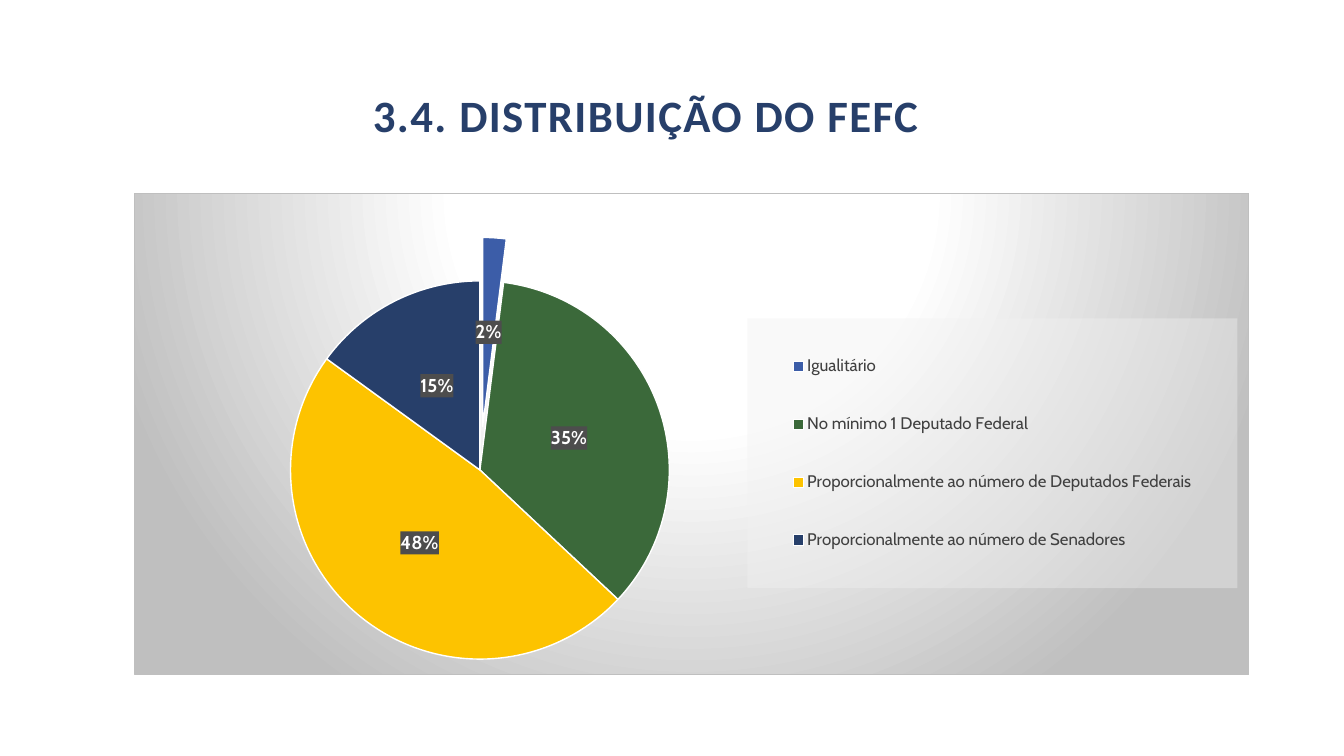
from dataclasses import dataclass

from lxml import etree
from pptx import Presentation
from pptx.chart.data import CategoryChartData
from pptx.dml.color import RGBColor
from pptx.enum.chart import XL_CHART_TYPE as ChartType
from pptx.enum.chart import XL_LABEL_POSITION as LabelPos
from pptx.enum.chart import XL_LEGEND_POSITION as LegendPos
from pptx.enum.text import MSO_ANCHOR as Anchor
from pptx.oxml import parse_xml
from pptx.oxml.ns import nsdecls, qn
from pptx.util import Inches, Pt

NAVY = "273F6A"
WHITE = "FFFFFF"
SILVER = "BFBFBF"


@dataclass(frozen=True)
class Slice:
    name: str
    share: int
    color: str
    explosion: int = 0


SLICES = [
    Slice("Igualitário", 2, "3C5DA8", 23),
    Slice("No mínimo 1 Deputado Federal", 35, "3B693A"),
    Slice("Proporcionalmente ao número de Deputados Federais", 48, "FDC300"),
    Slice("Proporcionalmente ao número de Senadores", 15, NAVY),
]


def rgb(color: str) -> RGBColor:
    return RGBColor.from_string(color)


def style_font(font, name: str, size: float, color: str, bold: bool = False) -> None:
    font.name, font.size, font.bold = name, Pt(size), bold
    font.color.rgb = rgb(color)


def shape_props(inner: str) -> etree.ElementBase:
    return parse_xml(f'<c:spPr {nsdecls("c", "a")}>{inner}</c:spPr>')


def solid_fill(color: str, alpha: int) -> str:
    return (f'<a:solidFill><a:srgbClr val="{color}"><a:alpha val="{alpha * 1000}"/>'
            '</a:srgbClr></a:solidFill>')


def manual_layout(x: float, y: float, w: float, h: float, inner: bool = False) -> etree.ElementBase:
    target = '<c:layoutTarget val="inner"/>' if inner else ""
    return parse_xml(
        f'<c:layout {nsdecls("c")}><c:manualLayout>{target}'
        '<c:xMode val="edge"/><c:yMode val="edge"/>'
        f'<c:x val="{x}"/><c:y val="{y}"/><c:w val="{w}"/><c:h val="{h}"/>'
        '</c:manualLayout></c:layout>')


def drop_layout(parent) -> None:
    for layout in parent.findall(qn("c:layout")):
        parent.remove(layout)


def add_title(slide, text: str) -> None:
    sp = slide.shapes.add_textbox(Inches(3.6), Inches(0.68), Inches(6.76), Inches(1.02))
    tf = sp.text_frame
    tf.word_wrap = True
    tf.vertical_anchor = Anchor.MIDDLE
    p = tf.paragraphs[0]
    p.line_spacing = 0.8
    r = p.add_run()
    r.text = text
    style_font(r.font, "Calibri", 32, NAVY, bold=True)
    r.font._element.set("spc", "100")


def add_pie(slide):
    data = CategoryChartData()
    data.categories = [s.name for s in SLICES]
    data.add_series("Series 1", [s.share for s in SLICES])
    chart = slide.shapes.add_chart(ChartType.PIE, Inches(1.33), Inches(1.91),
                                   Inches(11.06), Inches(4.79), data).chart
    chart.has_title = False
    style_font(chart.font, "Cabin", 10, "000000")
    plot = chart.plots[0]
    plot.vary_by_categories = True

    # Slices
    series = plot.series[0]
    for i, item in enumerate(SLICES):
        point = series.points[i]
        point.format.fill.solid()
        point.format.fill.fore_color.rgb = rgb(item.color)
        point.format.line.color.rgb = rgb(WHITE)
        point.format.line.width = Pt(1)
        if item.explosion:
            dpt = chart.element.findall(".//" + qn("c:dPt"))[i]
            dpt.find(qn("c:spPr")).addprevious(
                parse_xml(f'<c:explosion {nsdecls("c")} val="{item.explosion}"/>'))

    # Percentage labels on dark plates
    labels = series.data_labels
    labels.show_percentage = True
    labels.show_value = False
    labels.number_format, labels.number_format_is_linked = "0%", False
    labels.position = LabelPos.CENTER
    style_font(labels.font, "Cabin", 13.3, WHITE, bold=True)
    label_xml = chart.element.find(".//" + qn("c:dLbls"))
    label_xml.find(qn("c:txPr")).addprevious(shape_props(solid_fill("4D4D4D", 100)))

    plot_area = chart.element.find(".//" + qn("c:plotArea"))
    drop_layout(plot_area)
    plot_area.insert(0, manual_layout(0.14, 0.18, 0.34, 0.79, inner=True))
    return chart


def style_legend(chart) -> None:
    chart.has_legend = True
    legend = chart.legend
    legend.position = LegendPos.RIGHT
    legend.include_in_layout = False
    style_font(legend.font, "Cabin", 12, "404040")
    legend_xml = chart.element.find(".//" + qn("c:legend"))
    drop_layout(legend_xml)
    legend_xml.find(qn("c:legendPos")).addnext(manual_layout(0.55, 0.26, 0.44, 0.56))
    legend_xml.find(qn("c:txPr")).addprevious(shape_props(solid_fill("F2F2F2", 39)))


def style_background(chart) -> None:
    stops = "".join(f'<a:gs pos="{pos * 1000}"><a:srgbClr val="{color}"/></a:gs>'
                    for pos, color in [(0, WHITE), (39, WHITE), (100, SILVER)])
    chart.element.find(qn("c:chart")).addnext(shape_props(
        f'<a:gradFill><a:gsLst>{stops}</a:gsLst><a:path path="circle">'
        '<a:fillToRect l="50000" t="-80000" r="50000" b="180000"/></a:path></a:gradFill>'
        f'<a:ln w="9525"><a:solidFill><a:srgbClr val="{SILVER}"/></a:solidFill></a:ln>'))


def main() -> None:
    prs = Presentation()
    prs.slide_width, prs.slide_height = Inches(13.33), Inches(7.5)
    slide = prs.slides.add_slide(prs.slide_layouts[6])
    add_title(slide, "3.4. DISTRIBUIÇÃO DO FEFC")
    chart = add_pie(slide)
    style_legend(chart)
    style_background(chart)
    prs.save("out.pptx")


if __name__ == "__main__":
    main()
